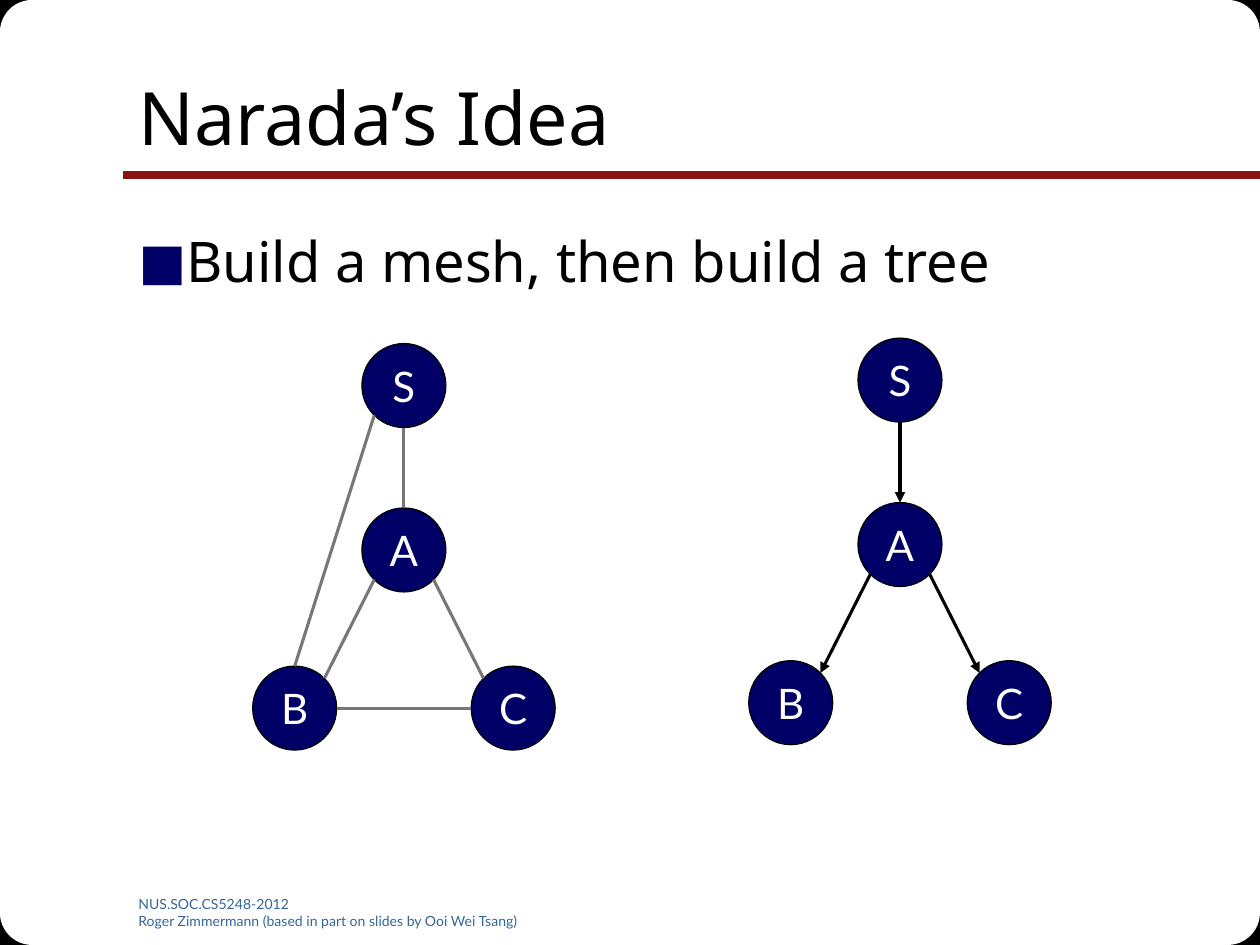
from math import cos, radians, sin
from typing import NamedTuple

from lxml.etree import SubElement
from pptx import Presentation
from pptx.dml.color import RGBColor
from pptx.enum.shapes import MSO_CONNECTOR as Connector, MSO_SHAPE as Preset
from pptx.enum.text import MSO_ANCHOR as Anchor, MSO_AUTO_SIZE as AutoSize, PP_ALIGN as Align
from pptx.oxml.ns import qn
from pptx.util import Inches, Pt

COLORS = {
    "black": "000000", "white": "FFFFFF", "navy": "000066",
    "rule": "891411", "footer": "336699", "mesh": "777777",
}
COLUMNS, ROWS = 100, 75
CELL = Inches(0.1)
NODE_SIZE = 6.66
SITES = {
    "right": 0, "lower right": 45, "bottom": 90, "lower left": 135,
    "left": 180, "upper left": 225, "top": 270, "upper right": 315,
}
NODES = {"S": (0, 0), "A": (0, 13.05), "B": (-8.67, 25.6), "C": (8.67, 25.6)}


class Edge(NamedTuple):
    """A link from one site of a node to a site of another."""
    start: str
    start_site: str
    end: str
    end_site: str


class Graph(NamedTuple):
    """A set of nodes placed around its source, with its links."""
    column: float
    row: float
    color: str
    arrows: bool
    edges: tuple[Edge, ...]


SOURCE_LINK = Edge("S", "bottom", "A", "top")
LEFT_BRANCH = Edge("A", "lower left", "B", "upper right")
RIGHT_BRANCH = Edge("A", "lower right", "C", "upper left")
TREE = Graph(71.43, 30.17, "black", True, (SOURCE_LINK, RIGHT_BRANCH, LEFT_BRANCH))
MESH = Graph(32.06, 30.6, "mesh", False, (
    SOURCE_LINK, RIGHT_BRANCH, Edge("S", "lower left", "B", "top"),
    LEFT_BRANCH, Edge("B", "right", "C", "left")))


def cells(*counts: float) -> list[int]:
    """Turn grid counts into lengths."""
    return [round(count * CELL) for count in counts]


def rgb(name: str) -> RGBColor:
    """Look up a colour by name."""
    return RGBColor.from_string(COLORS[name])


def write(shape, *lines: str, size: float, font: str, color: str,
          align=Align.LEFT, anchor=Anchor.TOP, wrap: bool = True) -> None:
    """Write lines of text into a shape in one format."""
    frame = shape.text_frame
    frame.text = "\n".join(lines)
    frame.auto_size, frame.word_wrap, frame.vertical_anchor = AutoSize.NONE, wrap, anchor
    for paragraph in frame.paragraphs:
        paragraph.alignment = align
        for run in paragraph.runs:
            run.font.size, run.font.name = Pt(size), font
            run.font.color.rgb = rgb(color)


def place(shape, left: float, top: float, width: float, height: float) -> None:
    """Move and size a shape on the grid."""
    shape.left, shape.top, shape.width, shape.height = cells(left, top, width, height)


def draw_shape(slide, preset, left: float, top: float, width: float, height: float,
               fill: str, outline: str | None = None):
    """Draw a filled preset shape."""
    shape = slide.shapes.add_shape(preset, *cells(left, top, width, height))
    shape.shadow.inherit = False
    shape.fill.solid()
    shape.fill.fore_color.rgb = rgb(fill)
    if outline:
        shape.line.color.rgb = rgb(outline)
        shape.line.width = Pt(0.75)
    else:
        shape.line.fill.background()
    return shape


def draw_line(slide, start: tuple[float, float], end: tuple[float, float],
              color: str, width: float, arrow: bool = False) -> None:
    """Draw a straight line, with an arrowhead at its end if asked."""
    line = slide.shapes.add_connector(Connector.STRAIGHT, *cells(*start, *end))
    line.line.color.rgb = rgb(color)
    line.line.width = Pt(width)
    if arrow:
        SubElement(line.line._get_or_add_ln(), qn("a:tailEnd"), type="triangle")
    SubElement(line._element.spPr, qn("a:effectLst"))


def draw_corners(slide, preset, size: float, fill: str, outline: str | None = None) -> None:
    """Draw one square in each corner of the slide."""
    for left in (0, COLUMNS - size):
        for top in (0, ROWS - size):
            draw_shape(slide, preset, left, top, size, size, fill, outline)


def site_point(graph: Graph, node: str, site: str) -> tuple[float, float]:
    """Find a connection site on the rim of a node."""
    across, down = NODES[node]
    angle, radius = radians(SITES[site]), NODE_SIZE / 2
    return (graph.column + across + radius * cos(angle),
            graph.row + down + radius * sin(angle))


def draw_graph(slide, graph: Graph) -> None:
    """Draw the nodes of a graph and then its links."""
    for label, (across, down) in NODES.items():
        node = draw_shape(slide, Preset.OVAL, graph.column + across - NODE_SIZE / 2,
                          graph.row + down - NODE_SIZE / 2, NODE_SIZE, NODE_SIZE,
                          "navy", "black")
        write(node, label, size=24, font="Lato", color="white",
              align=Align.CENTER, anchor=Anchor.MIDDLE, wrap=False)
    for edge in graph.edges:
        draw_line(slide, site_point(graph, edge.start, edge.start_site),
                  site_point(graph, edge.end, edge.end_site),
                  graph.color, 1.75, graph.arrows)


def add_bullet(paragraph, indent: float) -> None:
    """Give a paragraph a square navy bullet with a hanging indent."""
    properties = paragraph._p.get_or_add_pPr()
    [hang] = cells(indent)
    properties.set("marL", str(hang))
    properties.set("indent", str(-hang))
    color = SubElement(properties, qn("a:buClr"))
    SubElement(color, qn("a:srgbClr"), val=COLORS["navy"])
    SubElement(properties, qn("a:buSzPct"), val="90000")
    SubElement(properties, qn("a:buFont"), typeface="Noto Sans")
    SubElement(properties, qn("a:buChar"), char="■")


def main() -> None:
    """Build the slide and save it."""
    deck = Presentation()
    deck.slide_width, deck.slide_height = cells(COLUMNS, ROWS)
    slide = deck.slides.add_slide(deck.slide_layouts[1])
    title, body = slide.placeholders

    draw_corners(slide, Preset.RECTANGLE, 4.35, "black", "black")
    draw_corners(slide, Preset.ROUNDED_RECTANGLE, 15.3, "white")
    draw_line(slide, (COLUMNS, 13.9), (9.8, 13.9), "rule", 4.5)

    footer = slide.shapes.add_textbox(*cells(10, 70.6, 34.2, 2.8))
    write(footer, "NUS.SOC.CS5248-2012",
          "Roger Zimmermann (based in part on slides by Ooi Wei Tsang)",
          size=8, font="Lato", color="footer")

    place(title, 10, 3, 85, 12.5)
    write(title, "Narada’s Idea", size=42, font="Noto Sans", color="black",
          anchor=Anchor.MIDDLE)
    place(body, 10, 17.5, 85, 49.5)
    write(body, "Build a mesh, then build a tree", size=32, font="Noto Sans", color="black")
    add_bullet(body.text_frame.paragraphs[0], 3.75)
    for placeholder in (title, body):
        slide.shapes._spTree.append(placeholder._element)

    for graph in (TREE, MESH):
        draw_graph(slide, graph)
    deck.save("out.pptx")


if __name__ == "__main__":
    main()
